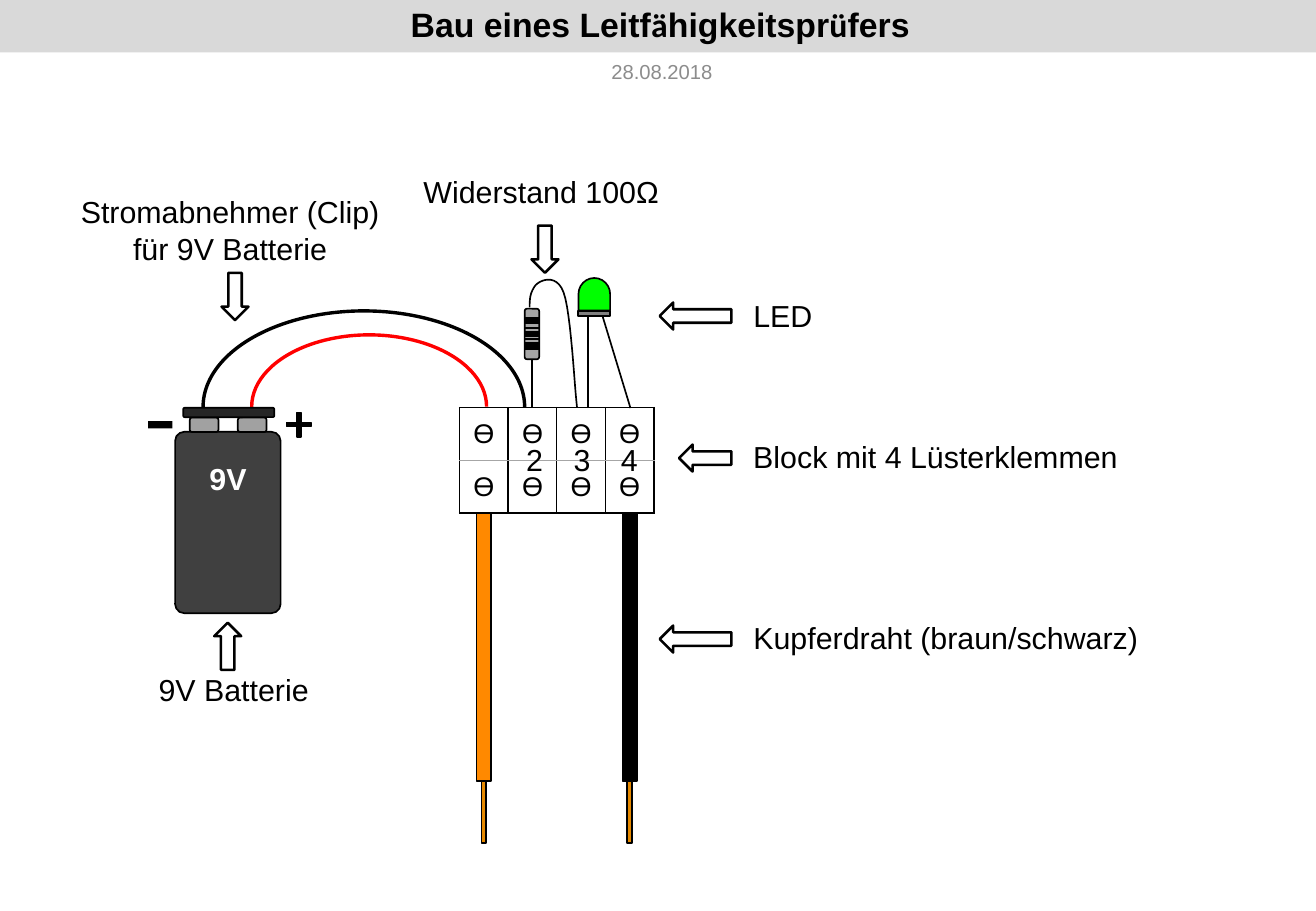
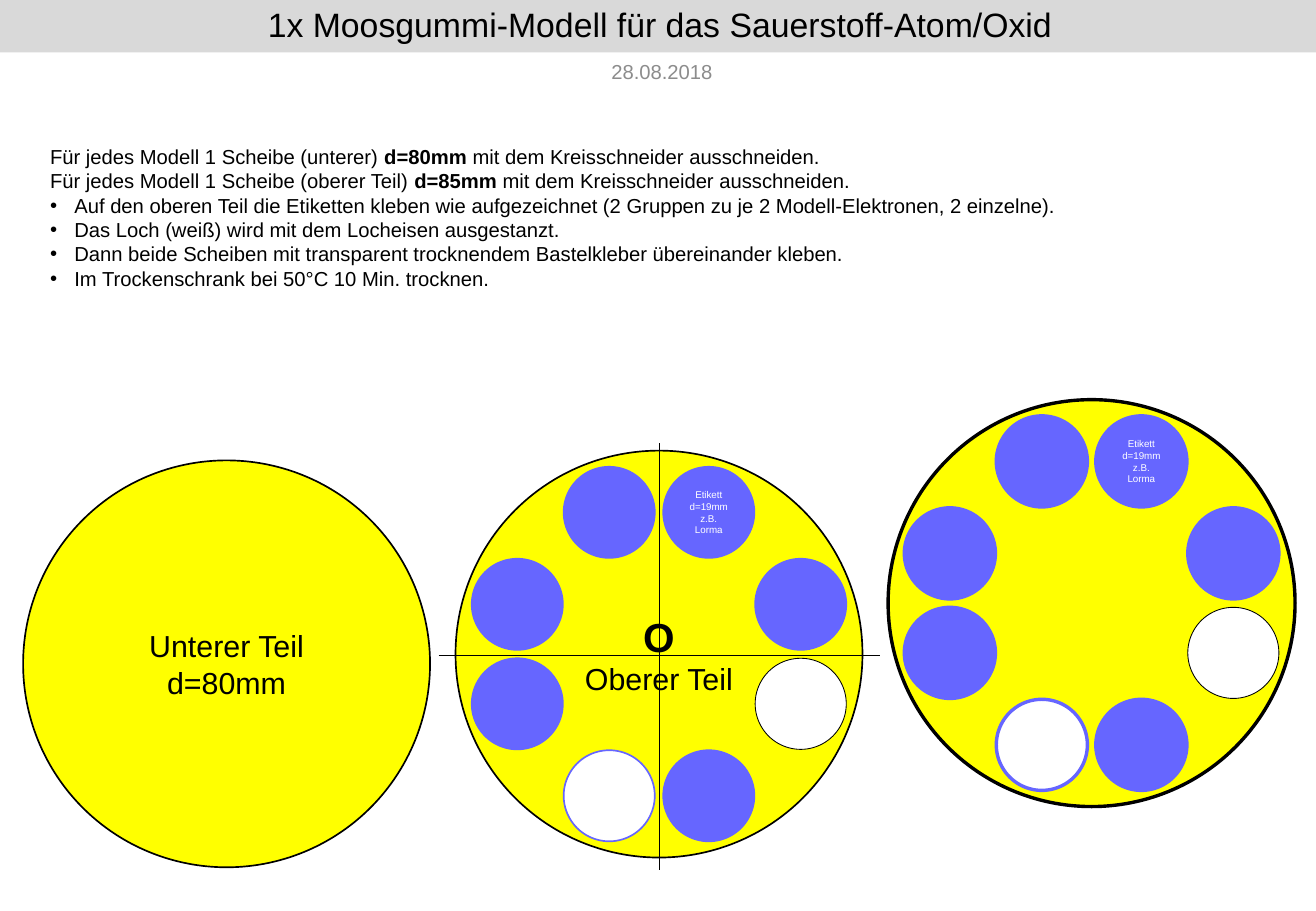
from pptx import Presentation
from pptx.dml.color import RGBColor
from pptx.enum import shapes, text
from pptx.oxml import ns, parse_xml
from pptx.util import Pt

COLORS = {
    "black": "000000", "white": "FFFFFF", "band": "D9D9D9", "date": "8C8C8C",
    "gray": "808080", "resistor": "A6A6A6", "contact": "A1A1A1", "battery": "404040",
    "clip": "262626", "green": "00FF00", "red": "FF0000", "orange": "FF8900",
    "copper": "E68900", "yellow": "FFFF00", "electron": "6666FF",
}
FONT = "Arial"
KIND = shapes.MSO_SHAPE
CENTER, LEFT = text.PP_ALIGN.CENTER, text.PP_ALIGN.LEFT
MIDDLE, TOP = text.MSO_ANCHOR.MIDDLE, text.MSO_ANCHOR.TOP
DATE = "28.08.2018"

# Content: a paragraph is a list of (text, run format) pairs
BOLD, PLAIN = {"bold": True}, {}
UMLAUT = {"bold": True, "font": "Calibri"}
TESTER_TITLE = [("Bau eines Leitf", BOLD), ("ä", UMLAUT), ("higkeitspr", BOLD),
                ("ü", UMLAUT), ("fers", BOLD)]
ATOM_TITLE = [("1x Moosgummi-Modell für das Sauerstoff-Atom/Oxid", PLAIN)]

LABELS = [  # lines, left, top, width, height
    (["LED"], 439, 172.8, 50, 28.8),
    (["9V Batterie"], 86.3, 394.2, 104.4, 28.8),
    (["Block mit 4 Lüsterklemmen"], 438.2, 256.3, 232.6, 28.8),
    (["Kupferdraht (braun/schwarz)"], 438.2, 363.6, 244.8, 28.8),
    (["Stromabnehmer (Clip)", "für 9V Batterie"], 37.4, 111.2, 198, 51.1),
    (["Widerstand 100Ω"], 243, 99, 155.5, 28.8),
]
POINTERS = [  # left, top, length, rotation
    (121, 375.1, 28, 270), (125.3, 167.8, 28, 90), (309, 139.7, 28, 90),
    (391, 179.3, 42.5, 180), (402.5, 263.5, 31, 180), (391, 370.8, 42.5, 180),
]
STRIPES = [(190.1, 4.5), (194.4, 1.5), (198, 3.5), (200.9, 1.5), (205.2, 4.5)]
LOOP_START = (313.9, 182.2)
LOOP_CURVES = [
    ((313.9, 175.7), (314.6, 173.5), (316.8, 169.9)),
    ((319, 166.3), (329.8, 161.3), (334.1, 173.5)),
    ((338.4, 185), (340.6, 230.4), (342, 241.2)),
]
BLOCK_LEFT, BLOCK_TOP, TERMINAL_WIDTH, TERMINAL_HEIGHT = 272.4, 241.6, 28.8, 31.3
WIRES = [(1, "orange"), (4, "black")]  # terminal number, colour

INSTRUCTIONS = [  # bulleted, runs
    (False, [("Für jedes Modell 1 Scheibe (unterer) ", PLAIN), ("d=80mm ", BOLD),
             ("mit dem Kreisschneider ausschneiden.", PLAIN)]),
    (False, [("Für jedes Modell 1 Scheibe (oberer Teil) ", PLAIN), ("d=85mm", BOLD),
             (" mit dem Kreisschneider ausschneiden.", PLAIN)]),
    (True, [("Auf den oberen Teil die Etiketten kleben wie aufgezeichnet "
             "(2 Gruppen zu je 2 Modell-Elektronen, 2 einzelne).", PLAIN)]),
    (True, [("Das Loch (weiß) wird mit dem Locheisen ausgestanzt.", PLAIN)]),
    (True, [("Dann beide Scheiben mit transparent trocknendem Bastelkleber "
             "übereinander kleben.", PLAIN)]),
    (True, [("Im Trockenschrank bei 50°C 10 Min. trocknen.", PLAIN)]),
]
LOWER_TEXT = [[("Unterer Teil", PLAIN)], [("d=80mm", PLAIN)]]
UPPER_TEXT = [[("O", {"bold": True, "size": 24})], [("Oberer Teil", PLAIN)]]
STICKER_TEXT = [[("Etikett d=19mm", PLAIN)], [("z.B. Lorma", PLAIN)]]
DISC, STICKER, NEAR, FAR = 241.2, 54, 29.5, 84


# Shared helpers
def rgb(name):
    return RGBColor.from_string(COLORS[name])


def box(left, top, width, height):
    return Pt(left), Pt(top), Pt(width), Pt(height)


def write(frame, paragraphs, size, color="black", align=CENTER, anchor=MIDDLE, spacing=None):
    frame.vertical_anchor = anchor
    for index, runs in enumerate(paragraphs):
        paragraph = frame.add_paragraph() if index else frame.paragraphs[0]
        paragraph.alignment = align
        if spacing:
            paragraph.line_spacing = spacing
        for words, style in runs:
            run = paragraph.add_run()
            run.text = words
            run.font.name = style.get("font", FONT)
            run.font.size = Pt(style.get("size", size))
            run.font.bold = style.get("bold", False)
            run.font.color.rgb = rgb(color)


def paint(shape, fill, line="black", weight=1):
    shape.shadow.inherit = False
    if fill:
        shape.fill.solid()
        shape.fill.fore_color.rgb = rgb(fill)
    else:
        shape.fill.background()
    if line:
        shape.line.color.rgb = rgb(line)
        shape.line.width = Pt(weight)
    else:
        shape.line.fill.background()


def add_shape(slide, kind, place, fill, line="black", weight=1, rotation=0, adjust=()):
    shape = slide.shapes.add_shape(kind, *box(*place))
    paint(shape, fill, line, weight)
    shape.rotation = rotation
    for index, value in enumerate(adjust):
        shape.adjustments[index] = value
    return shape


def add_line(slide, start, end, weight=1, begin_at=None, end_at=None):
    line = slide.shapes.add_connector(
        shapes.MSO_CONNECTOR.STRAIGHT, *map(Pt, start + end))
    line.line.color.rgb = rgb("black")
    line.line.width = Pt(weight)
    line._element.spPr.append(parse_xml(f"<a:effectLst {ns.nsdecls('a')}/>"))
    if begin_at:
        line.begin_connect(*begin_at)
    if end_at:
        line.end_connect(*end_at)


def add_text(slide, place, paragraphs, size, wrap=False, **style):
    frame = slide.shapes.add_textbox(*box(*place)).text_frame
    frame.word_wrap = wrap
    write(frame, paragraphs, size, **style)
    return frame


def add_slide(presentation, title_runs):
    slide = presentation.slides.add_slide(presentation.slide_layouts[5])
    title = slide.shapes.title
    title.left, title.top, title.width, title.height = box(0, 0, 782.6, 31)
    title.fill.solid()
    title.fill.fore_color.rgb = rgb("band")
    title.text_frame.auto_size = text.MSO_AUTO_SIZE.NONE
    write(title.text_frame, [title_runs], 20, spacing=0.9)
    add_text(slide, (345.6, 31, 93.6, 22.3), [[(DATE, PLAIN)]], 12, True, color="date")
    return slide


# Slide 1: parts of the tester
def add_led_and_resistor(slide):
    add_shape(slide, KIND.RECTANGLE, (342.7, 184.3, 18.8, 3), "gray")
    add_shape(slide, KIND.FLOWCHART_DELAY, (342.6, 165, 19.3, 18.8), "green", rotation=270)
    add_line(slide, (348.5, 241.9), (348.5, 187.2))
    add_line(slide, (373.7, 241.9), (357.1, 187.2))

    left, width, top, height = 311, 8.6, 183, 30
    resistor = add_shape(slide, KIND.ROUNDED_RECTANGLE, (left, top, width, height), "resistor")
    for y, weight in STRIPES:
        central = y == top + height / 2
        add_line(slide, (left, y), (left + width, y), weight,
                 (resistor, 1) if central else None, (resistor, 3) if central else None)
    middle = left + width / 2
    add_line(slide, (middle, 241.2), (middle, top + height), end_at=(resistor, 2))

    points, start = [], LOOP_START
    for control_1, control_2, end in LOOP_CURVES:
        for step in range(1, 13):
            t = step / 12
            points.append(tuple(
                Pt((1 - t) ** 3 * a + 3 * t * (1 - t) ** 2 * b + 3 * t * t * (1 - t) * c + t ** 3 * d)
                for a, b, c, d in zip(start, control_1, control_2, end)))
        start = end
    builder = slide.shapes.build_freeform(*map(Pt, LOOP_START))
    builder.add_line_segments(points, close=False)
    paint(builder.convert_to_shape(), None)


def add_wires(slide):
    top = BLOCK_TOP + 2 * TERMINAL_HEIGHT
    for terminal, color in WIRES:
        center = BLOCK_LEFT + (terminal - 0.5) * TERMINAL_WIDTH
        add_shape(slide, KIND.RECTANGLE, (center - 4.3, top, 8.6, 158.6), color)
        add_shape(slide, KIND.RECTANGLE, (center - 1.4, top + 158.6, 2.8, 36.7), "copper")


def add_battery(slide):
    add_shape(slide, KIND.ROUNDED_RECTANGLE, (103.8, 256, 62.5, 107.5), "battery", adjust=[0.086])
    for left in (112.5, 141):
        add_shape(slide, KIND.ROUNDED_RECTANGLE, (left, 247.5, 17, 8.6), "contact")
    add_shape(slide, KIND.CROSS, (169.9, 244.5, 14.4, 14.4), "black", adjust=[0.417])
    add_shape(slide, KIND.RECTANGLE, (87.8, 249.6, 14.4, 4.4), "black", None)


def add_terminal_block(slide):
    frame = slide.shapes.add_table(
        2, 4, *box(BLOCK_LEFT, BLOCK_TOP, 4 * TERMINAL_WIDTH, 2 * TERMINAL_HEIGHT))
    table = frame.table
    table.first_row = table.horz_banding = False
    for column in table.columns:
        column.width = Pt(TERMINAL_WIDTH)
    for row_index, row in enumerate(table.rows):
        row.height = Pt(TERMINAL_HEIGHT)
        for cell in row.cells:
            cell.fill.background()
            cell.vertical_anchor = MIDDLE
            write(cell.text_frame, [[("Ө", PLAIN)]], 16)
            properties = cell._tc.get_or_add_tcPr()
            inner = "B" if row_index == 0 else "T"
            for position, side in enumerate("LRTB"):
                color = COLORS["resistor" if side == inner else "black"]
                properties.insert(position, parse_xml(
                    f'<a:ln{side} {ns.nsdecls("a")} w="12700"><a:solidFill>'
                    f'<a:srgbClr val="{color}"/></a:solidFill></a:ln{side}>'))


def build_tester(presentation):
    slide = add_slide(presentation, TESTER_TITLE)
    add_led_and_resistor(slide)
    add_wires(slide)
    add_battery(slide)
    add_terminal_block(slide)
    for place, color in (((149.2, 198.5, 139.2, 85), "red"), ((120.4, 184.3, 190.6, 113.8), "black")):
        add_shape(slide, KIND.ARC, place, None, color, 2, adjust=[107.691, 0])
    add_shape(slide, KIND.ROUNDED_RECTANGLE, (108.6, 241.7, 54, 5.6), "clip")

    for index, number in enumerate("234"):
        add_text(slide, (304.6 + 28.1 * index, 257.8, 24.5, 28.8), [[(number, PLAIN)]], 18, anchor=TOP)
    add_text(slide, (116.8, 269.3, 36.7, 28.8), [[("9V", BOLD)]], 18, color="white", anchor=TOP)
    for lines, *place in LABELS:
        add_text(slide, place, [[(line, PLAIN)] for line in lines], 18, anchor=TOP)
    for left, top, length, rotation in POINTERS:
        add_shape(slide, KIND.RIGHT_ARROW, (left, top, length, 16), "white", weight=1.5, rotation=rotation)


# Slide 2: discs of the atom model
def add_disc(slide, center_x, center_y, diameter, fill, line="black", weight=1):
    radius = diameter / 2
    return add_shape(slide, KIND.OVAL, (center_x - radius, center_y - radius, diameter, diameter),
                     fill, line, weight)


def add_upper_disc(slide, center_x, center_y, weight, caption):
    disc = add_disc(slide, center_x, center_y, DISC, "yellow", weight=weight)
    write(disc.text_frame, caption, 18)
    places = [(x * a, y * b) for a, b in ((NEAR, FAR), (FAR, NEAR)) for x in (-1, 1) for y in (-1, 1)]
    special = {(-NEAR, FAR): ("white", "electron", weight), (FAR, NEAR): ("white", "black", 0.5)}
    for dx, dy in places:
        look = special.get((dx, dy), ("electron", "electron", weight))
        sticker = add_disc(slide, center_x + dx, center_y + dy, STICKER, *look)
        if (dx, dy) == (NEAR, -FAR):
            write(sticker.text_frame, STICKER_TEXT, 5.8, "white")


def build_atom(presentation):
    slide = add_slide(presentation, ATOM_TITLE)
    frame = add_text(slide, (22.6, 82.1, 737.3, 135.4), [runs for _, runs in INSTRUCTIONS], 12,
                     True, align=LEFT, anchor=TOP)
    for paragraph, (bulleted, _) in zip(frame.paragraphs, INSTRUCTIONS):
        properties = paragraph._p.get_or_add_pPr()
        properties.set("marL", str(Pt(14.4)))
        properties.set("indent", str(-Pt(14.4)))
        if bulleted:
            for bullet in ('buFont typeface="Arial"', 'buChar char="•"'):
                tag, attribute = bullet.split(" ")
                properties.append(parse_xml(f"<a:{tag} {ns.nsdecls('a')} {attribute}/>"))

    lower = add_disc(slide, 134.3, 393.5, DISC, "yellow")
    write(lower.text_frame, LOWER_TEXT, 18)
    add_upper_disc(slide, 390.6, 387.7, 1, UPPER_TEXT)
    add_upper_disc(slide, 647, 357.5, 2, [])
    add_line(slide, (390.6, 262.8), (390.6, 515.5), 0.5)
    add_line(slide, (260, 388.5), (521.3, 388.5), 0.5)


def main():
    presentation = Presentation()
    presentation.slide_width, presentation.slide_height = Pt(780), Pt(540)
    build_tester(presentation)
    build_atom(presentation)
    presentation.save("out.pptx")


if __name__ == "__main__":
    main()
